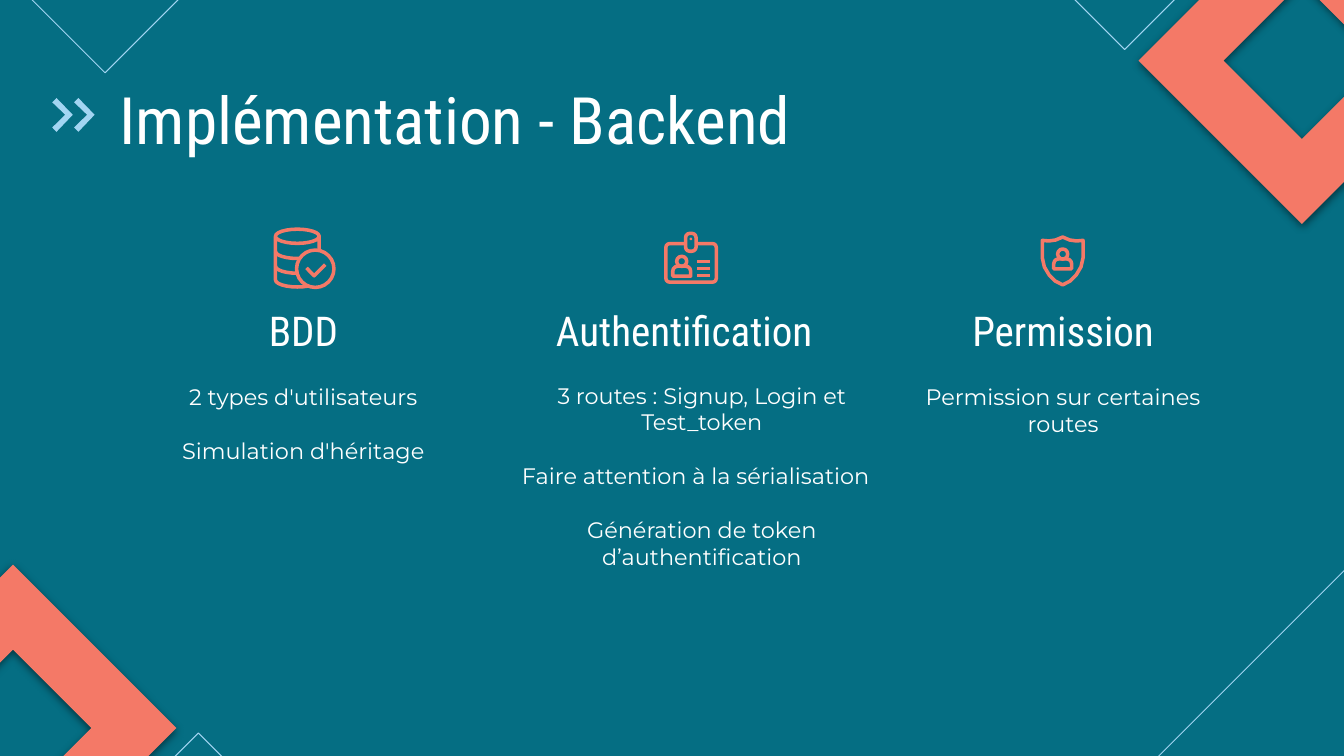
from pptx import Presentation
from pptx.dml.color import RGBColor as Rgb
from pptx.enum.shapes import MSO_CONNECTOR as Link, MSO_SHAPE as Form
from pptx.enum.text import MSO_ANCHOR as Anchor, PP_ALIGN as Align
from pptx.oxml.ns import qn
from pptx.util import Pt
from lxml.etree import SubElement as Sub

HUES = {"back": "056E83", "coral": "F47967", "sky": "A2D5F2", "text": "FFFFFF"}
HEAD, BODY = "Roboto Condensed", "Montserrat"


def rhomb(x, y, r):
    return [(x, y - r), (x + r, y), (x, y + r), (x - r, y)]


class Board:
    def __init__(self, slide):
        self.slide = slide
        self.shapes = slide.shapes
        self.stroke = 1.9
        fill = slide.background.fill
        fill.solid()
        fill.fore_color.rgb = self.hue("back")

    def hue(self, name):
        return Rgb.from_string(HUES[name])

    def paint(self, shape, fill=None, line=None, width=None):
        shape.shadow.inherit = False
        for part, name in ((shape.fill, fill), (shape.line.fill, line)):
            if name:
                part.solid()
                part.fore_color.rgb = self.hue(name)
            else:
                part.background()
        if line:
            shape.line.width = Pt(width or self.stroke)
        return shape

    def form(self, kind, x, y, w, h, fill=None, line="coral", width=None, adj=()):
        shape = self.shapes.add_shape(kind, Pt(x), Pt(y), Pt(w), Pt(h))
        for i, value in enumerate(adj):
            shape.adjustments[i] = value
        return self.paint(shape, fill, line, width)

    def disc(self, x, y, r, **style):
        return self.form(Form.OVAL, x - r, y - r, 2 * r, 2 * r, **style)

    def free(self, *paths, close=True, **style):
        pen = None
        for path in paths:
            first, *rest = [(Pt(x), Pt(y)) for x, y in path]
            if pen is None:
                pen = self.shapes.build_freeform(*first, scale=1.0)
            else:
                pen.move_to(*first)
            pen.add_line_segments(rest, close=close)
        return self.paint(pen.convert_to_shape(), **style)

    def ring(self, x, y):
        shape = self.free(rhomb(x, y, 42), rhomb(x, y, 87.5)[::-1], fill="coral")
        glow = Sub(shape._element.spPr.find(qn("a:effectLst")), qn("a:outerShdw"),
                   blurRad=str(Pt(4.5)), dist=str(Pt(1.5)), dir="5400000",
                   algn="bl", rotWithShape="0")
        tint = Sub(glow, qn("a:srgbClr"), val="000000")
        Sub(tint, qn("a:alpha"), val="50000")

    def dash(self, x, y, w):
        line = self.shapes.add_connector(Link.STRAIGHT, Pt(x), Pt(y), Pt(x + w), Pt(y))
        line.line.color.rgb = self.hue("coral")
        line.line.width = Pt(self.stroke)
        Sub(line._element.spPr, qn("a:effectLst"))

    def person(self, x, y):
        self.disc(x, y, 2.7, line="coral")
        self.form(Form.ROUND_2_SAME_RECTANGLE, x - 4.8, y + 2.6, 9.6, 5.3, adj=(0.5, 0))

    def text(self, x, y, w, h, paras, font, size, anchor=Anchor.TOP, indent=12, gap=0):
        frame = self.shapes.add_textbox(Pt(x), Pt(y), Pt(w), Pt(h)).text_frame
        frame.word_wrap = True
        frame.vertical_anchor = anchor
        for side in ("left", "top", "right", "bottom"):
            setattr(frame, f"margin_{side}", Pt(7.2))
        for i, (words, align) in enumerate(paras):
            para = frame.add_paragraph() if i else frame.paragraphs[0]
            para.alignment = align
            para.space_before = Pt(gap if i else 0)
            para._p.get_or_add_pPr().set("marL", str(Pt(indent)))
            run = para.add_run()
            run.text = words
            run.font.name = font
            run.font.size = Pt(size)
            run.font.color.rgb = self.hue("text")

    def store(self):
        self.form(Form.CAN, 147.6, 122.8, 23.4, 31, adj=(0.325,))
        for y in (130.9, 138.8):
            self.form(Form.ARC, 147.6, y, 23.4, 7.6, adj=(0, 108))
        self.disc(168.9, 144, 10, fill="back")
        self.free([(164.2, 143.6), (168.3, 147.8), (174.2, 141.8)],
                  close=False, line="coral")

    def badge(self):
        self.form(Form.ROUNDED_RECTANGLE, 356.7, 130.5, 27, 20.7, adj=(0.1,))
        self.form(Form.ROUNDED_RECTANGLE, 367.3, 125, 5.6, 9.6, fill="back", adj=(0.4,))
        self.disc(370.1, 128, 0.7, fill="coral", line=None)
        for i in range(3):
            self.dash(373.5, 140 + 3.75 * i, 7)
        self.person(365.2, 140)

    def shield(self):
        mid = 569.3
        half = [(0, 127), (3.8, 128.6), (7.4, 129.1), (10.9, 128.8), (10.9, 138.2),
                (9.8, 143), (7.2, 147.4), (4, 150.6), (0, 152.6)]
        right = [(mid + x, y) for x, y in half]
        left = [(mid - x, y) for x, y in half[-2:0:-1]]
        self.free(right + left, line="coral")
        self.person(mid, 136.1)


def main():
    deck = Presentation()
    deck.slide_width, deck.slide_height = Pt(720), Pt(405)
    board = Board(deck.slides.add_slide(deck.slide_layouts[6]))

    arrow = [(30.3, 52.5), (28, 54.8), (35, 61.5), (28, 68.3), (30.3, 70.6), (39, 61.5)]
    for step in (0, 11.7):
        board.free([(x + step, y) for x, y in arrow], fill="sky")
    for x, y in ((697.5, 32.5), (7, 390)):
        board.ring(x, y)
    for x, y in ((106.3, 520.2), (602.5, -101), (56.3, -88.5), (738, 415.3)):
        board.form(Form.DIAMOND, x - 127.5, y - 127.5, 255, 255, line="sky", width=0.5)

    board.text(57, 35.5, 607, 45, [("Implémentation - Backend", Align.LEFT)],
               HEAD, 35, indent=0)
    mid = Align.CENTER
    parts = [
        ("BDD", 56, 56, 201, 198,
         [("2 types d'utilisateurs", mid), ("Simulation d'héritage", mid)]),
        ("Authentification", 260, 260.6, 219, 197.3,
         [("3 routes : Signup, Login et Test_token", mid),
          ("Faire attention à\u00a0la sérialisation", Align.LEFT),
          ("Génération de token d’authentification", mid)]),
        ("Permission", 463, 463, 201, 198, [("Permission sur certaines routes", mid)]),
    ]
    for name, x, left, w, y, lines in parts:
        board.text(x, 152, 201, 45.5, [(name, mid)], HEAD, 22, Anchor.BOTTOM)
        board.text(left, y, w, 156, lines, BODY, 12, gap=14.4)

    board.store()
    board.badge()
    board.shield()
    deck.save("out.pptx")


if __name__ == "__main__":
    main()
